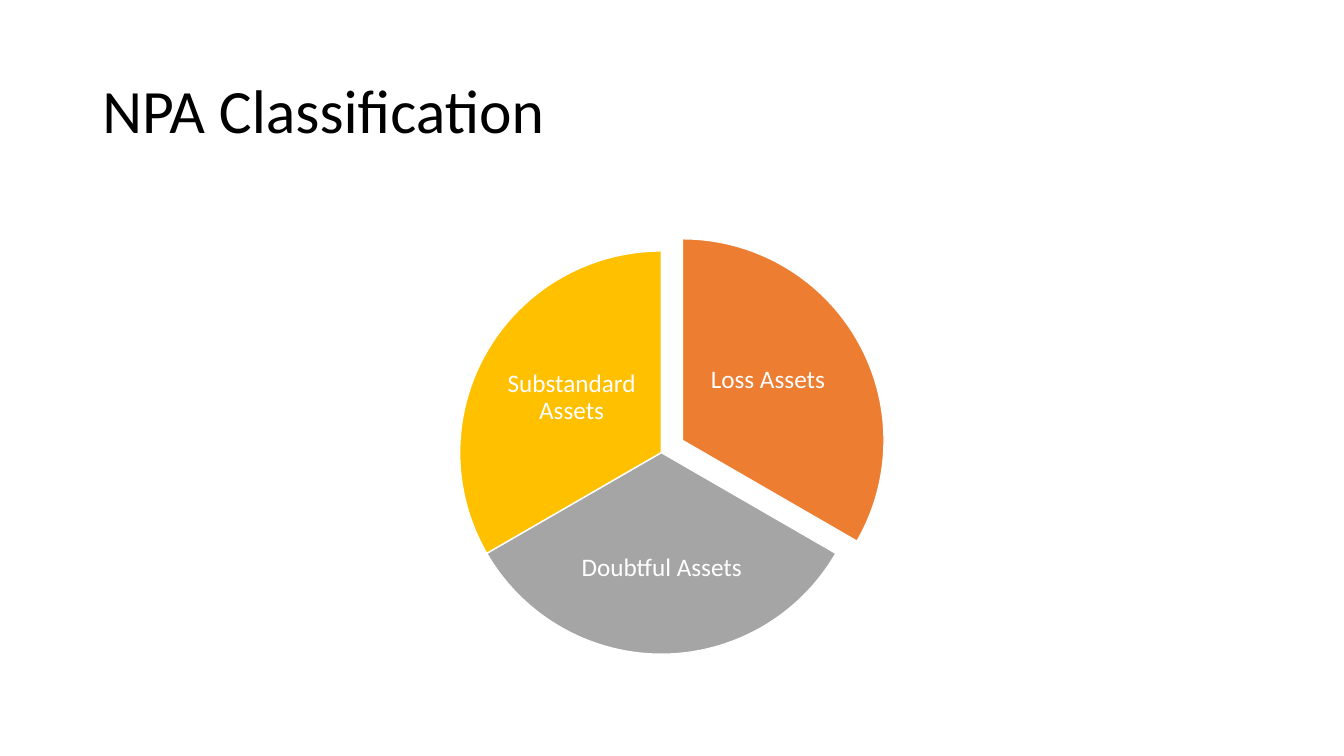
from dataclasses import dataclass

import pptx
import pptx.dml.color
import pptx.enum.shapes
import pptx.enum.text
import pptx.util

Pt = pptx.util.Pt
RGB = pptx.dml.color.RGBColor
Align = pptx.enum.text.PP_ALIGN


@dataclass(frozen=True)
class Theme:
    font: str = "Calibri"
    head: int = 44
    label: int = 18
    ink: str = "000000"
    white: str = "FFFFFF"
    orange: str = "ED7D31"
    grey: str = "A5A5A5"
    gold: str = "FFC000"


@dataclass(frozen=True)
class Box:
    left: float
    top: float
    width: float
    height: float

    def place(self) -> tuple:
        return Pt(self.left), Pt(self.top), Pt(self.width), Pt(self.height)


@dataclass(frozen=True)
class Slice:
    name: str
    color: str
    left: float
    top: float
    label: Box


THEME = Theme()
SIZE = 288  # pie diameter
START = 270  # angle of the first slice, clockwise from the right
TITLE = Box(66, 28.75, 828, 104.4)
SLICES = [
    Slice("Loss Assets", THEME.orange, 343.5, 170.6,
          Box(499.5, 224, 98, 95.8)),
    Slice("Doubtful Assets", THEME.grey, 328.4, 179.3,
          Box(407.5, 361.5, 130.3, 89.3)),
    Slice("Substandard Assets", THEME.gold, 328.4, 179.3,
          Box(359.3, 236.2, 98, 95.8)),
]


def write(shape, text: str, size: int, color: str, align: Align) -> None:
    """Fill a shape with one styled paragraph, centred vertically."""
    frame = shape.text_frame
    frame.text = text
    frame.word_wrap = True
    frame.auto_size = pptx.enum.text.MSO_AUTO_SIZE.NONE
    frame.vertical_anchor = pptx.enum.text.MSO_ANCHOR.MIDDLE
    para = frame.paragraphs[0]
    para.alignment = align
    para.line_spacing = 0.9
    para.space_before = Pt(0)
    font = para.runs[0].font
    font.name = THEME.font
    font.size = Pt(size)
    font.color.rgb = RGB.from_string(color)


def draw_slice(group, part: Slice, start: float, sweep: float) -> None:
    """Draw one slice of the pie and its label."""
    pie = group.shapes.add_shape(
        pptx.enum.shapes.MSO_SHAPE.PIE,
        *Box(part.left, part.top, SIZE, SIZE).place())
    # An adjustment of 0.6 is one degree
    pie.adjustments[0] = start % 360 * 0.6
    pie.adjustments[1] = (start + sweep) % 360 * 0.6
    pie.shadow.inherit = False
    pie.fill.solid()
    pie.fill.fore_color.rgb = RGB.from_string(part.color)
    pie.line.color.rgb = RGB.from_string(THEME.white)
    pie.line.width = Pt(1)

    label = group.shapes.add_textbox(*part.label.place())
    write(label, part.name, THEME.label, THEME.white, Align.CENTER)
    frame = label.text_frame
    frame.margin_left = frame.margin_right = Pt(2)
    frame.margin_top = frame.margin_bottom = Pt(2)


def main() -> None:
    deck = pptx.Presentation()
    deck.slide_width, deck.slide_height = Pt(960), Pt(540)
    slide = deck.slides.add_slide(deck.slide_layouts[5])

    # Title
    title = slide.shapes.title
    title.left, title.top, title.width, title.height = TITLE.place()
    write(title, "NPA Classification", THEME.head, THEME.ink, Align.LEFT)

    # Pie of equal slices
    group = slide.shapes.add_group_shape()
    sweep = 360 / len(SLICES)
    for i, part in enumerate(SLICES):
        draw_slice(group, part, START + i * sweep, sweep)

    deck.save("out.pptx")


if __name__ == "__main__":
    main()
